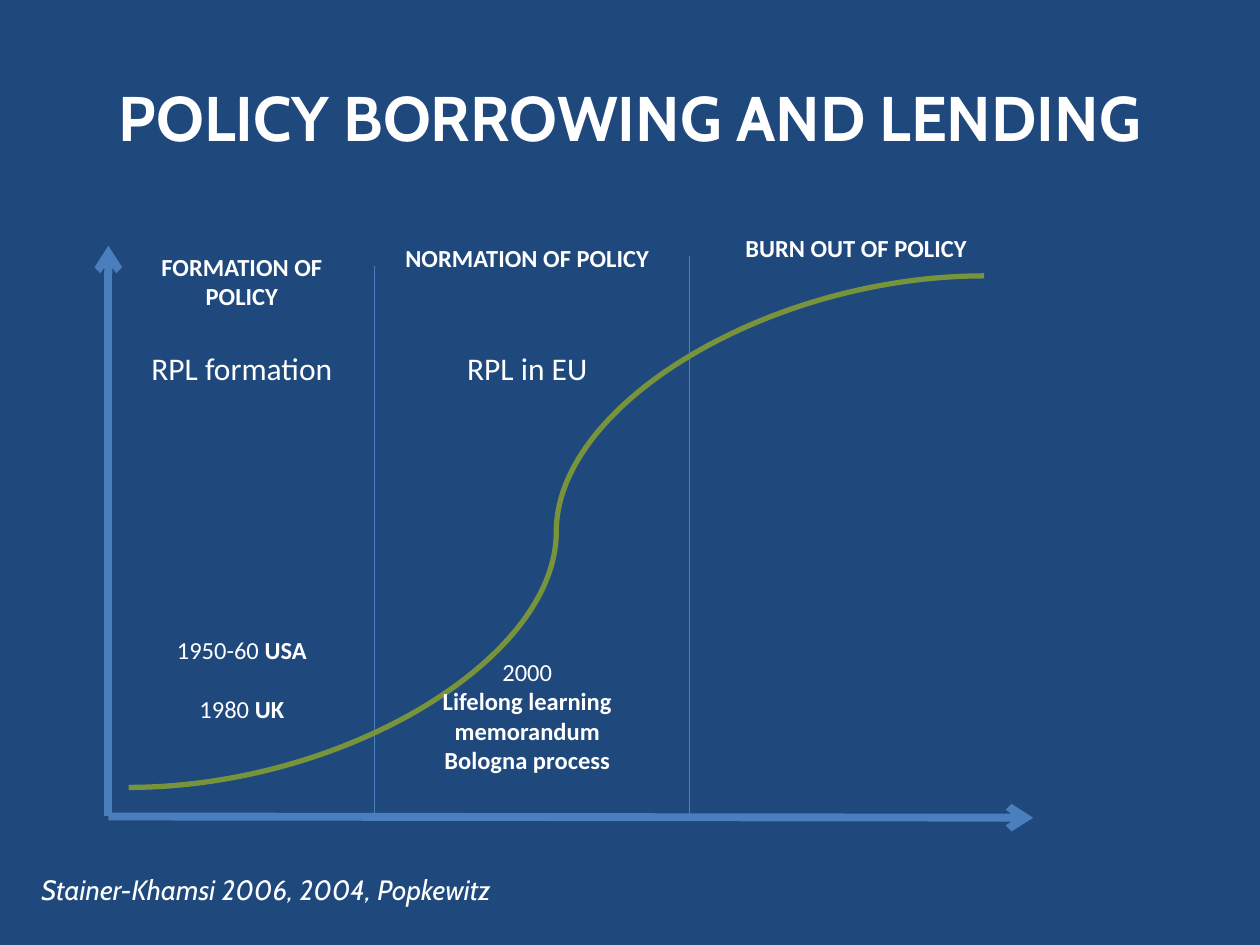
from dataclasses import dataclass

from pptx import Presentation
from pptx.dml.color import RGBColor
from pptx.enum.shapes import MSO_CONNECTOR
from pptx.enum.text import MSO_ANCHOR, MSO_AUTO_SIZE, PP_ALIGN
from pptx.oxml.ns import qn
from pptx.shapes.connector import Connector
from pptx.slide import Slide
from pptx.text.text import TextFrame
from pptx.util import Inches, Pt
from lxml.etree import SubElement

NAVY = RGBColor(0x1F, 0x49, 0x7D)
BLUE = RGBColor(0x4B, 0x7E, 0xBC)
GREEN = RGBColor(0x77, 0x93, 0x3C)
WHITE = RGBColor(0xFF, 0xFF, 0xFF)

ORIGIN = (0.86, 6.48)


@dataclass
class Line:
    start: tuple[float, float]
    end: tuple[float, float]
    width: float
    color: RGBColor = BLUE
    kind: MSO_CONNECTOR = MSO_CONNECTOR.STRAIGHT
    arrow: bool = False


@dataclass
class Para:
    """Runs are (text, bold) pairs; gap is the space before, in points."""
    runs: list[tuple[str, bool]]
    size: int = 14
    gap: float = 0
    font: str = "Calibri"
    italic: bool = False
    align: PP_ALIGN = PP_ALIGN.CENTER


@dataclass
class Box:
    place: tuple[float, float, float, float]
    paras: list[Para]


LINES = [
    Line(ORIGIN, (0.86, 1.95), 4.5, arrow=True),
    Line(ORIGIN, (8.2, 6.49), 4.5, arrow=True),
    Line((2.97, 2.11), (2.97, 6.48), 0.75),
    Line((5.47, 2.03), (5.47, 6.49), 0.75),
    Line((1.02, 6.25), (7.81, 2.19), 3, GREEN, MSO_CONNECTOR.CURVE),
]

TITLE = Para([("POLICY BORROWING AND LENDING", True)], 36, font="Cabin")

BOXES = [
    Box((1.02, 1.95, 1.8, 4.14), [
        Para([("FORMATION OF POLICY", True)]),
        Para([("RPL formation", False)], 18, gap=22),
        Para([("1950-60 ", False), ("USA", True)], gap=141.5),
        Para([("1980 ", False), ("UK", True)], gap=17),
    ]),
    Box((3.05, 1.88, 2.27, 4.78), [
        Para([("NORMATION OF POLICY", True)]),
        Para([("RPL in EU", False)], 18, gap=44),
        Para([("2000", False)], gap=154),
        Para([("Lifelong learning memorandum", True)]),
        Para([("Bologna process", True)]),
    ]),
    Box((5.78, 1.8, 2.03, 0.34), [Para([("BURN OUT OF POLICY", True)])]),
    Box((0.23, 6.88, 3.98, 0.37), [
        Para([("Stainer-Khamsi 2006, 2004, Popkewitz", False)], 16,
             font="Cabin", italic=True, align=PP_ALIGN.LEFT),
    ]),
]


def draw_line(slide: Slide, line: Line) -> Connector:
    ends = [Inches(v) for v in (*line.start, *line.end)]
    conn = slide.shapes.add_connector(line.kind, *ends)
    conn.line.width = Pt(line.width)
    conn.line.fill.solid()
    conn.line.fill.fore_color.rgb = line.color
    if line.arrow:
        SubElement(conn.line._get_or_add_ln(), qn("a:tailEnd"), type="arrow")
    SubElement(conn._element.spPr, qn("a:effectLst"))
    return conn


def write(frame: TextFrame, paras: list[Para]) -> None:
    for i, para in enumerate(paras):
        p = frame.add_paragraph() if i else frame.paragraphs[0]
        p.alignment = para.align
        p.space_before = Pt(para.gap)
        for text, bold in para.runs:
            run = p.add_run()
            run.text = text
            look = {"name": para.font, "size": Pt(para.size),
                    "bold": bold, "italic": para.italic}
            for key, value in look.items():
                setattr(run.font, key, value)
            run.font.color.rgb = WHITE


def draw_box(slide: Slide, box: Box) -> None:
    shape = slide.shapes.add_textbox(*map(Inches, box.place))
    frame = shape.text_frame
    frame.word_wrap = True
    frame.auto_size = MSO_AUTO_SIZE.SHAPE_TO_FIT_TEXT
    write(frame, box.paras)


def main() -> None:
    deck = Presentation()
    deck.slide_width, deck.slide_height = Inches(10), Inches(7.5)
    slide = deck.slides.add_slide(deck.slide_layouts[5])
    slide.background.fill.solid()
    slide.background.fill.fore_color.rgb = NAVY

    title = slide.shapes.title
    spot = {"left": 0.5, "top": 0.3, "width": 9, "height": 1.25}
    for key, value in spot.items():
        setattr(title, key, Inches(value))
    title.text_frame.vertical_anchor = MSO_ANCHOR.MIDDLE
    write(title.text_frame, [TITLE])

    for line in LINES:
        draw_line(slide, line)
    for box in BOXES:
        draw_box(slide, box)
    deck.save("out.pptx")


if __name__ == "__main__":
    main()
